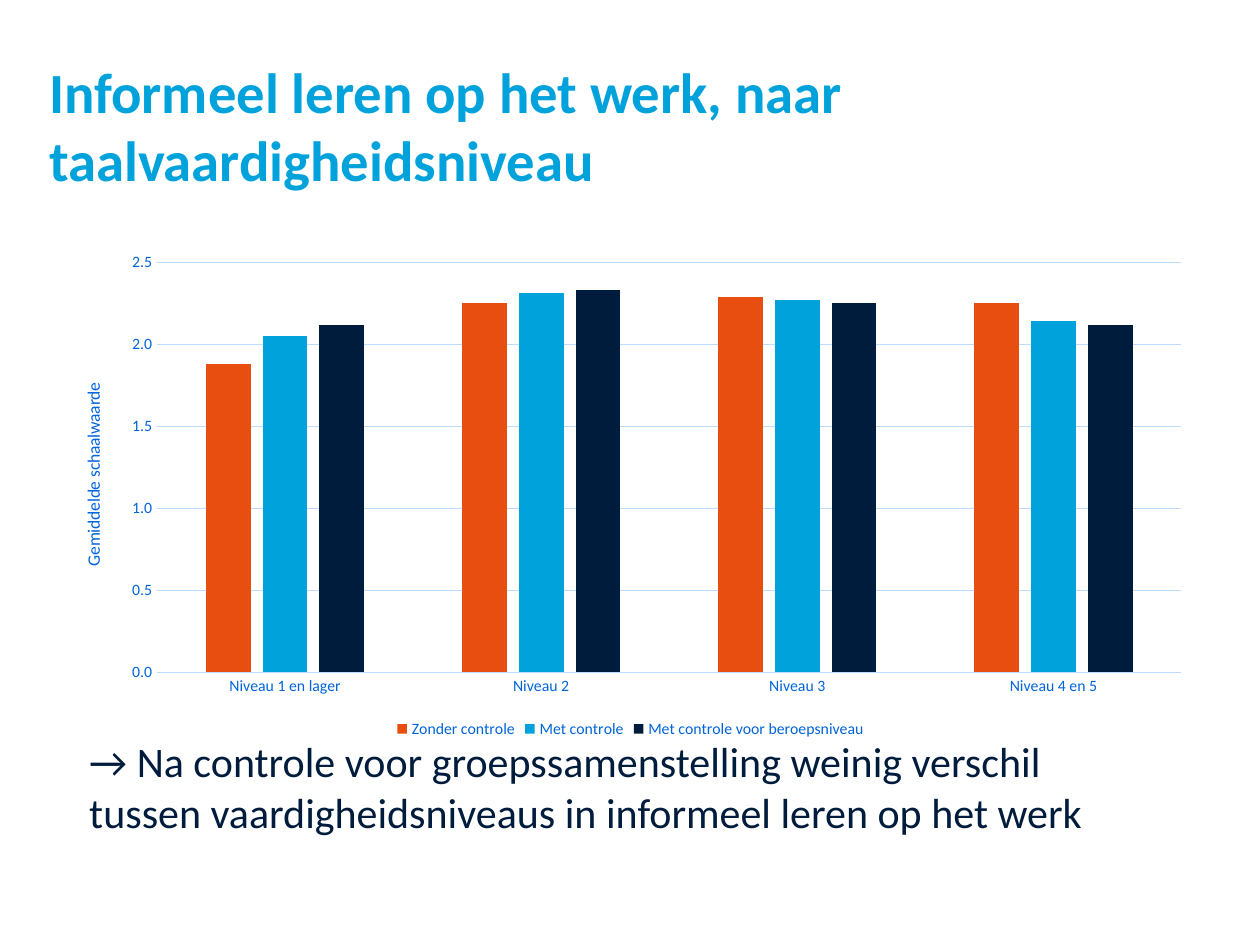
import pptx
import pptx.chart.data
import pptx.dml.color
import pptx.enum.chart
import pptx.enum.text
import pptx.util

Cm = pptx.util.Cm
Pt = pptx.util.Pt
kinds = pptx.enum.chart
BLUE, NAVY, ORANGE = "00A2DB", "001C3D", "E84E10"
LABEL, GRID = "0064DA", "BCDBFF"


def paint(color, code):
    """Set a font's, fill's or line's colour from a hex string."""
    color.rgb = pptx.dml.color.RGBColor.from_string(code)


def style(font, size, code, bold=False):
    font.name = "Calibri"
    font.size = Pt(size)
    font.bold = bold
    paint(font.color, code)


deck = pptx.Presentation()
deck.slide_width, deck.slide_height = Cm(25.4), Cm(19.05)
slide = deck.slides.add_slide(deck.slide_layouts[5])

# Title
title = slide.shapes.title
title.left, title.top = Cm(0.99), Cm(1.14)
title.width, title.height = Cm(23.14), Cm(2.11)
frame = title.text_frame
frame.margin_left = frame.margin_right = 0
frame.margin_top = frame.margin_bottom = 0
frame.word_wrap = True
frame.auto_size = pptx.enum.text.MSO_AUTO_SIZE.NONE
frame.vertical_anchor = pptx.enum.text.MSO_ANCHOR.TOP
para = frame.paragraphs[0]
para.alignment = pptx.enum.text.PP_ALIGN.LEFT
run = para.add_run()
run.text = "Informeel leren op het werk, naar taalvaardigheidsniveau"
style(run.font, 32.4, BLUE, True)

# Chart
series = [
    ("Zonder controle", (1.88, 2.25, 2.29, 2.25), ORANGE),
    ("Met controle", (2.05, 2.31, 2.27, 2.14), BLUE),
    ("Met controle voor beroepsniveau", (2.12, 2.33, 2.25, 2.12), NAVY),
]
data = pptx.chart.data.CategoryChartData(number_format="0.00")
data.categories = ["Niveau 1 en lager", "Niveau 2", "Niveau 3", "Niveau 4 en 5"]
for name, values, code in series:
    data.add_series(name, values)
chart = slide.shapes.add_chart(
    kinds.XL_CHART_TYPE.COLUMN_CLUSTERED,
    Cm(1.14), Cm(4.9), Cm(23.14), Cm(10.08), data,
).chart
style(chart.font, 10, NAVY)
chart.has_title = False
chart.has_legend = True
chart.legend.position = kinds.XL_LEGEND_POSITION.BOTTOM
chart.legend.include_in_layout = False
style(chart.legend.font, 9, LABEL)

plot = chart.plots[0]
plot.gap_width, plot.overlap = 219, -27
plot.vary_by_categories = False
for bars, (name, values, code) in zip(plot.series, series):
    bars.format.fill.solid()
    paint(bars.format.fill.fore_color, code)

for axis in (chart.category_axis, chart.value_axis):
    axis.major_tick_mark = axis.minor_tick_mark = kinds.XL_TICK_MARK.NONE
    style(axis.tick_labels.font, 9, LABEL)

scale = chart.value_axis
scale.minimum_scale, scale.maximum_scale, scale.major_unit = 0, 2.5, 0.5
scale.tick_labels.number_format = "0.0"
scale.tick_labels.number_format_is_linked = False
scale.format.line.fill.background()
for line in (chart.category_axis.format.line, scale.major_gridlines.format.line):
    line.width = Pt(0.75)
    paint(line.color, GRID)
run = scale.axis_title.text_frame.paragraphs[0].add_run()
run.text = "Gemiddelde schaalwaarde"
style(run.font, 10, LABEL)

# Conclusion
note = slide.shapes.add_textbox(Cm(1.55), Cm(14.71), Cm(22.05), Cm(2.31))
note.text_frame.word_wrap = True
note.text_frame.auto_size = pptx.enum.text.MSO_AUTO_SIZE.SHAPE_TO_FIT_TEXT
run = note.text_frame.paragraphs[0].add_run()
run.text = (
    "→ Na controle voor groepssamenstelling weinig verschil "
    "tussen vaardigheidsniveaus in informeel leren op het werk"
)
style(run.font, 24, NAVY)

deck.save("out.pptx")
